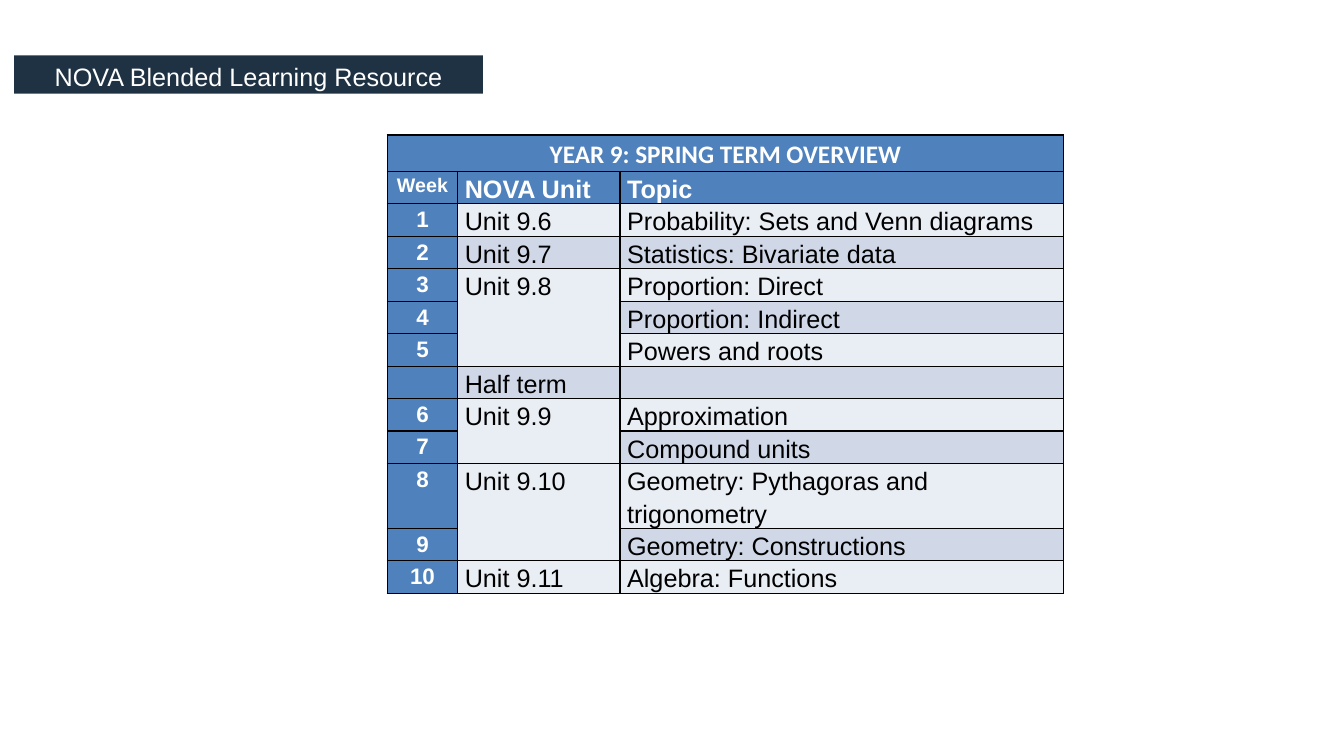
from lxml import etree
from pptx import Presentation
from pptx import util as u
from pptx.dml.color import RGBColor
from pptx.enum import text
from pptx.oxml import ns

BANNER = "NOVA Blended Learning Resource"
HEADING = "YEAR 9: SPRING TERM OVERVIEW"
COLUMN_NAMES = ("Week", "NOVA Unit", "Topic")
# An empty unit continues the one above it.
WEEKS = [
    ("1", "Unit 9.6", "Probability: Sets and Venn diagrams"),
    ("2", "Unit 9.7", "Statistics: Bivariate data"),
    ("3", "Unit 9.8", "Proportion: Direct"),
    ("4", "", "Proportion: Indirect"),
    ("5", "", "Powers and roots"),
    ("", "Half term", ""),
    ("6", "Unit 9.9", "Approximation"),
    ("7", "", "Compound units"),
    ("8", "Unit 9.10", "Geometry: Pythagoras and trigonometry"),
    ("9", "", "Geometry: Constructions"),
    ("10", "Unit 9.11", "Algebra: Functions"),
]
COLUMN_WIDTHS = (0.7, 1.61, 4.4)
HEADING_HEIGHT, LINE_HEIGHT = 0.36, 0.32
TWO_LINE_WEEK = "8"
NAVY, BLUE, WHITE, BLACK = "1F3244", "4F81BD", "FFFFFF", "000000"
BANDS = ("E9EDF4", "D0D8E8")
CENTER, LEFT = text.PP_ALIGN.CENTER, text.PP_ALIGN.LEFT


def paint(color_format, color):
    color_format.rgb = RGBColor.from_string(color)


def fill_with(part, color):
    part.fill.solid()
    paint(part.fill.fore_color, color)


def write(paragraph, words, color, align=LEFT, **font):
    paragraph.alignment = align
    run = paragraph.add_run()
    run.text = words
    for key, value in {"name": "Arial", "size": u.Pt(18), "bold": False, **font}.items():
        setattr(run.font, key, value)
    paint(run.font.color, color)


def add_borders(cell):
    properties = cell._tc.get_or_add_tcPr()
    for side in ("a:lnL", "a:lnR", "a:lnT", "a:lnB"):
        line = etree.SubElement(properties, ns.qn(side), w=str(u.Pt(1)))
        solid = etree.SubElement(line, ns.qn("a:solidFill"))
        etree.SubElement(solid, ns.qn("a:srgbClr"), val=BLACK)


def add_banner(slide):
    banner = slide.shapes.title
    banner.left, banner.top, banner.width, banner.height = map(u.Inches, (0.14, 0.55, 4.65, 0.38))
    fill_with(banner, NAVY)
    frame = banner.text_frame
    settings = {"auto_size": text.MSO_AUTO_SIZE.NONE, "word_wrap": True,
                "vertical_anchor": text.MSO_ANCHOR.MIDDLE,
                "margin_top": u.Inches(0.04), "margin_bottom": 0}
    for key, value in settings.items():
        setattr(frame, key, value)
    write(frame.paragraphs[0], BANNER, WHITE, CENTER)


def cell_style(row, column):
    """Return the fill and the text format of one cell."""
    if row == 0:
        return BLUE, dict(color=WHITE, align=CENTER, name="Calibri", bold=True)
    if column == 0:
        size = u.Pt(14 if row == 1 else 16)
        return BLUE, dict(color=WHITE, align=CENTER, size=size, bold=True)
    if row == 1:
        return BLUE, dict(color=WHITE, bold=True)
    return BANDS[row % 2], dict(color=BLACK)


def add_overview(slide):
    rows = [(HEADING, "", ""), COLUMN_NAMES, *WEEKS]
    heights = [HEADING_HEIGHT] + [
        LINE_HEIGHT * (2 if row[0] == TWO_LINE_WEEK else 1) for row in rows[1:]]
    overview = slide.shapes.add_table(
        len(rows), len(COLUMN_WIDTHS), u.Inches(3.84), u.Inches(1.34),
        u.Inches(sum(COLUMN_WIDTHS)), u.Inches(sum(heights))).table
    for column, width in zip(overview.columns, COLUMN_WIDTHS):
        column.width = u.Inches(width)
    for row, height in zip(overview.rows, heights):
        row.height = u.Inches(height)

    for r, row in enumerate(rows):
        for c, words in enumerate(row):
            cell = overview.cell(r, c)
            fill, style = cell_style(r, c)
            add_borders(cell)
            fill_with(cell, fill)
            cell.margin_left = cell.margin_right = u.Inches(0.07)
            cell.margin_top = cell.margin_bottom = 0
            if words:
                paragraph = cell.text_frame.paragraphs[0]
                paragraph.line_spacing = 1.15
                write(paragraph, words, **style)

    overview.cell(0, 0).merge(overview.cell(0, 2))
    unit_starts = [r for r, row in enumerate(rows) if r and row[1]]
    for start, following in zip(unit_starts, unit_starts[1:] + [len(rows)]):
        if following - start > 1:
            overview.cell(start, 1).merge(overview.cell(following - 1, 1))


def main():
    deck = Presentation()
    deck.slide_width, deck.slide_height = u.Inches(13.33), u.Inches(7.5)
    slide = deck.slides.add_slide(deck.slide_layouts[5])
    add_banner(slide)
    add_overview(slide)
    deck.save("out.pptx")


if __name__ == "__main__":
    main()
